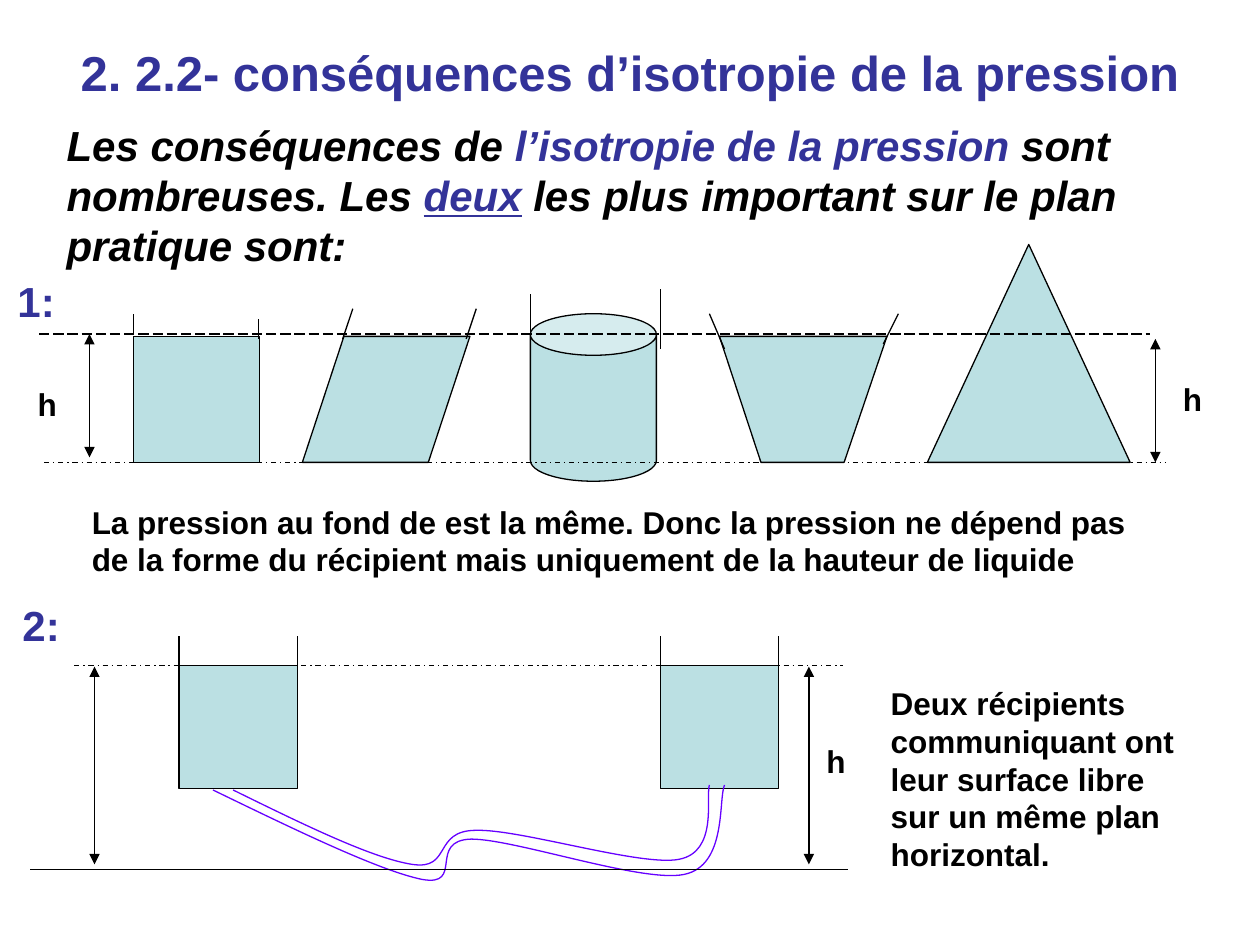
from dataclasses import dataclass
from typing import NamedTuple

from lxml.etree import SubElement
from pptx import Presentation
from pptx.dml.color import RGBColor
from pptx.enum.dml import MSO_LINE as Dash
from pptx.enum.shapes import MSO_CONNECTOR as Conn, MSO_SHAPE as Kind
from pptx.enum.text import MSO_ANCHOR as Anchor, PP_ALIGN as Align
from pptx.oxml.ns import qn
from pptx.util import Inches, Pt


@dataclass(frozen=True)
class Theme:
    font: str = "Arial"
    ink: RGBColor = RGBColor(0, 0, 0)
    blue: RGBColor = RGBColor(0x33, 0x33, 0x99)
    water: RGBColor = RGBColor(0xBB, 0xE0, 0xE3)
    pipe: RGBColor = RGBColor(0x66, 0x00, 0xFF)
    line: float = 0.75
    title: int = 28
    lead: int = 24
    note: int = 18


class Run(NamedTuple):
    text: str
    color: RGBColor
    under: bool = False


class Vessel(NamedTuple):
    kind: Kind
    x: float
    y: float
    w: float
    h: float
    adj: float | None = None


class Line(NamedTuple):
    x1: float
    y1: float
    x2: float
    y2: float
    dash: Dash | None = None
    arrow: bool = False


T = Theme()
TOP, BASE = 2.67, 3.67      # upper figure: water level and floor
LEVEL, FLOOR = 5.28, 6.9    # lower figure
TANK_W, TANK_H = 0.94, 0.98
TANKS = (1.42, 5.24)

VESSELS = [
    Vessel(Kind.RECTANGLE, 1.06, TOP, 1, 1),
    Vessel(Kind.PARALLELOGRAM, 2.4, TOP, 1.33, 1, 0.33),
    Vessel(Kind.CAN, 4.21, 2.49, 1, 1.33, 0.33),
    Vessel(Kind.ISOSCELES_TRIANGLE, 7.36, 1.94, 1.61, 1.73, 0.5),
]
FUNNEL = [(5.71, TOP), (6.04, BASE), (6.7, BASE), (7.04, TOP)]
MARKS = [
    Line(0.35, BASE, 9.25, BASE, Dash.DASH_DOT),
    Line(1.06, 2.65, 1.06, 2.49),
    Line(2.05, 2.69, 2.05, 2.53),
    Line(2.72, 2.69, 2.8, 2.45),
    Line(3.7, 2.69, 3.78, 2.45),
    Line(4.21, 2.73, 4.21, 2.33),
    Line(5.24, 2.77, 5.24, 2.29),
    Line(5.75, 2.77, 5.63, 2.49),
    Line(7.01, 2.73, 7.13, 2.49),
    Line(0.31, 2.65, 9.13, 2.65, Dash.LONG_DASH),
    Line(0.71, 2.65, 0.71, 3.63, arrow=True),
    Line(9.17, 2.69, 9.17, BASE, arrow=True),
]
SURFACE = Line(0.59, LEVEL, 6.69, LEVEL, Dash.DASH_DOT)
GAUGES = [
    Line(0.24, FLOOR, 6.73, FLOOR),
    Line(0.75, 5.29, 0.75, 6.86, arrow=True),
    Line(6.42, 5.29, 6.42, 6.86, arrow=True),
]
# Start point, then groups of two handles and an end point
PIPES = [
    [(1.85, 6.27), (2.4, 6.54), (2.95, 6.81), (3.27, 6.86),
     (3.59, 6.91), (3.43, 6.59), (3.78, 6.59),
     (4.13, 6.58), (5.09, 6.88), (5.39, 6.82),
     (5.7, 6.76), (5.6, 6.33), (5.63, 6.23)],
    [(1.69, 6.27), (2.35, 6.59), (3.01, 6.91), (3.35, 6.98),
     (3.69, 7.04), (3.39, 6.67), (3.74, 6.66),
     (4.09, 6.66), (5.1, 7.01), (5.43, 6.94),
     (5.77, 6.87), (5.7, 6.35), (5.75, 6.23)],
]


def style(shape, fill: RGBColor | None = T.water, color: RGBColor = T.ink) -> None:
    shape.shadow.inherit = False
    if fill is None:
        shape.fill.background()
    else:
        shape.fill.solid()
        shape.fill.fore_color.rgb = fill
    shape.line.color.rgb = color
    shape.line.width = Pt(T.line)


def draw_vessel(slide, v: Vessel) -> None:
    shape = slide.shapes.add_shape(v.kind, *map(Inches, (v.x, v.y, v.w, v.h)))
    if v.adj is not None:
        shape.adjustments[0] = v.adj
    style(shape)


def draw_line(slide, ln: Line) -> None:
    ends = map(Inches, (ln.x1, ln.y1, ln.x2, ln.y2))
    conn = slide.shapes.add_connector(Conn.STRAIGHT, *ends)
    conn.line.color.rgb = T.ink
    conn.line.width = Pt(T.line)
    if ln.dash is not None:
        conn.line.dash_style = ln.dash
    if ln.arrow:
        for tag in ("a:headEnd", "a:tailEnd"):
            SubElement(conn.line._get_or_add_ln(), qn(tag), type="triangle")
    SubElement(conn._element.spPr, qn("a:effectLst"))


def draw_path(slide, points: list, close: bool):
    first, *rest = [(Inches(x), Inches(y)) for x, y in points]
    pen = slide.shapes.build_freeform(*first, scale=1.0)
    pen.add_line_segments(rest, close=close)
    return pen.convert_to_shape()


def draw_pipe(slide, knots: list) -> None:
    """Draw the knots as a path, then turn each three segments into one curve."""
    shape = draw_path(slide, knots, close=False)
    route = next(shape._element.iter(qn("a:path")))
    legs = route.findall(qn("a:lnTo"))
    for i in range(0, len(legs), 3):
        bend = SubElement(route, qn("a:cubicBezTo"))
        for leg in legs[i:i + 3]:
            bend.append(leg[0])
            route.remove(leg)
    style(shape, fill=None, color=T.pipe)


def add_text(slide, box: tuple, *runs: Run, size: int = T.note, italic: bool = False,
             align: Align = Align.LEFT, anchor: Anchor = Anchor.TOP) -> None:
    frame = slide.shapes.add_textbox(*map(Inches, box)).text_frame
    frame.word_wrap = True
    frame.vertical_anchor = anchor
    para = frame.paragraphs[0]
    para.alignment = align
    for part in runs:
        run = para.add_run()
        run.text = part.text
        font = run.font
        font.name, font.size = T.font, Pt(size)
        font.bold, font.italic = True, italic
        font.color.rgb = part.color
        if part.under:
            font.underline = True


def add_height(slide, x: float, y: float) -> None:
    add_text(slide, (x, y, 0.35, 0.4), Run("h", T.ink))


def write_head(slide) -> None:
    add_text(slide, (0.5, 0.16, 9, 0.83),
             Run("2. 2.2- conséquences d’isotropie de la pression", T.blue),
             size=T.title, align=Align.CENTER, anchor=Anchor.MIDDLE)
    add_text(slide, (0.43, 0.92, 8.98, 1.25),
             Run("Les conséquences de ", T.ink),
             Run("l’isotropie de la pression", T.blue),
             Run(" sont nombreuses. Les ", T.ink),
             Run("deux", T.blue, under=True),
             Run(" les plus important sur le plan pratique sont:", T.ink),
             size=T.lead, italic=True, anchor=Anchor.MIDDLE)


def draw_shapes(slide) -> None:
    *front, cone = VESSELS
    for vessel in front:
        draw_vessel(slide, vessel)
    style(draw_path(slide, FUNNEL, close=True))
    draw_vessel(slide, cone)
    for line in MARKS:
        draw_line(slide, line)
    add_height(slide, 0.2, 3.01)
    add_height(slide, 9.29, 2.97)


def write_notes(slide) -> None:
    add_text(slide, (0.63, 3.94, 8.62, 0.7),
             Run("La pression au fond de est la même. Donc la pression ne dépend pas "
                 "de la forme du récipient mais uniquement de la hauteur de liquide", T.ink))
    add_text(slide, (6.97, 5.38, 2.52, 1.6),
             Run("Deux récipients communiquant ont leur surface libre "
                 "sur un même plan horizontal.", T.ink))
    for x, y, mark in ((0.04, 2.14, "1:"), (0.08, 4.71, "2:")):
        add_text(slide, (x, y, 0.51, 0.5), Run(mark, T.blue), size=T.lead)


def draw_tanks(slide) -> None:
    for x in TANKS:
        draw_vessel(slide, Vessel(Kind.RECTANGLE, x, LEVEL, TANK_W, TANK_H))
        for side in (x, x + TANK_W):
            draw_line(slide, Line(side, 5.56, side, 5.05))
    draw_line(slide, SURFACE)
    for knots in PIPES:
        draw_pipe(slide, knots)
    for line in GAUGES:
        draw_line(slide, line)
    add_height(slide, 6.46, 5.84)


def main() -> None:
    deck = Presentation()
    deck.slide_width, deck.slide_height = Inches(10), Inches(7.5)
    slide = deck.slides.add_slide(deck.slide_layouts[6])
    for draw in (write_head, draw_shapes, write_notes, draw_tanks):
        draw(slide)
    deck.save("out.pptx")


if __name__ == "__main__":
    main()
